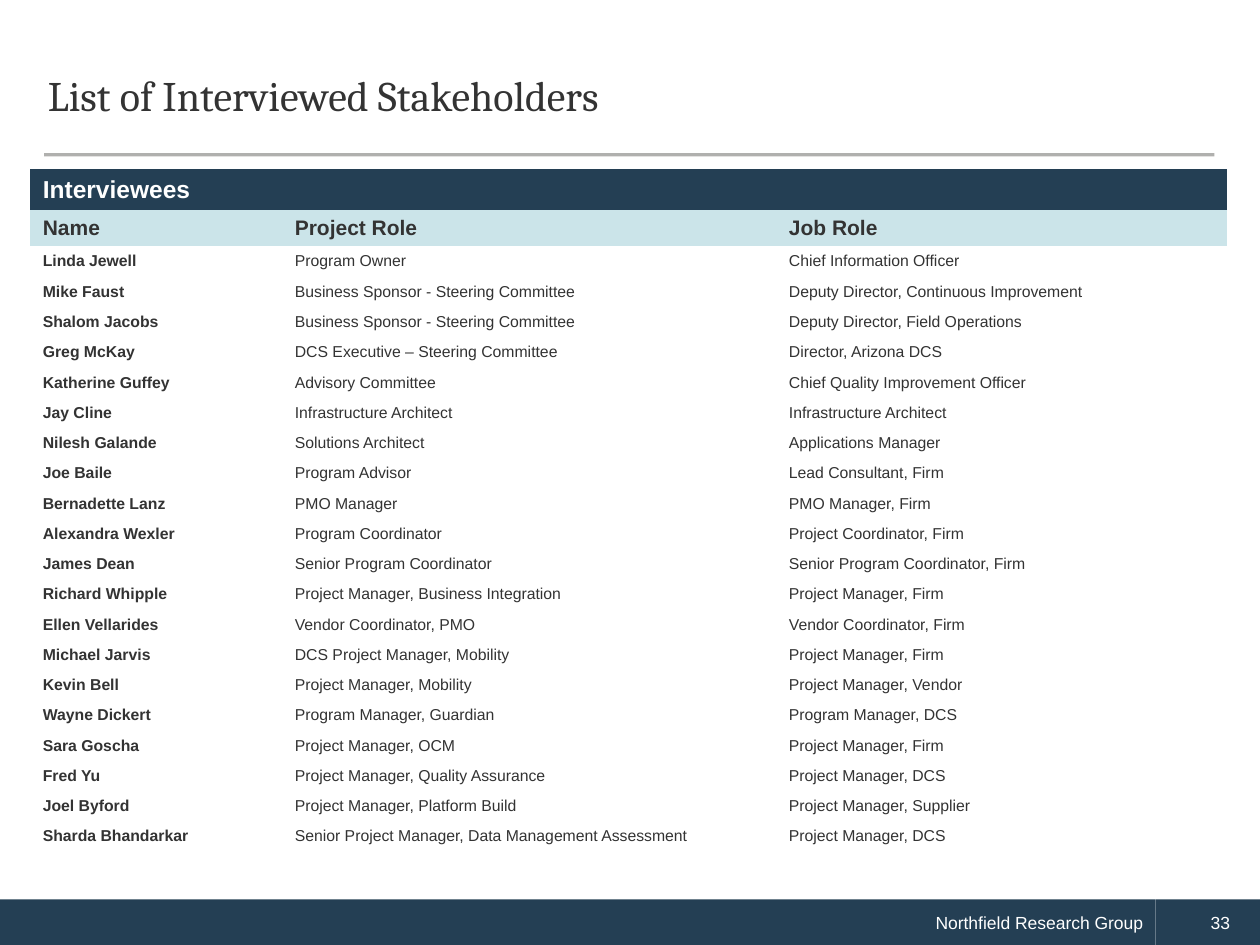
from dataclasses import dataclass

from lxml import etree
from pptx import Presentation
from pptx.dml.color import RGBColor
from pptx.enum import shapes, text
from pptx.oxml.ns import qn
from pptx.util import Cm, Pt


@dataclass(frozen=True)
class Theme:
    navy: RGBColor = RGBColor(0x24, 0x3F, 0x54)
    pale: RGBColor = RGBColor(0xCB, 0xE4, 0xE9)
    ink: RGBColor = RGBColor(0x33, 0x33, 0x33)
    rule: RGBColor = RGBColor(0x45, 0x43, 0x3E)
    white: RGBColor = RGBColor(0xFF, 0xFF, 0xFF)
    heading_face: str = "Cambria"
    body_face: str = "Arial"
    title_size: int = 24
    banner_size: int = 14
    header_size: int = 12
    row_size: int = 9
    footer_size: int = 10


THEME = Theme()
NO_GRID_STYLE = "{2D5ABB26-0587-4C30-8999-92F81FD0307C}"
COLUMN_WIDTHS = (5.08, 9.96, 9.09)
BANNER_HEIGHT, HEADER_HEIGHT, ROW_HEIGHT = 0.83, 0.73, 0.61

HEADERS = ("Name", "Project Role", "Job Role")
INTERVIEWEES = (
    ("Linda Jewell", "Program Owner", "Chief Information Officer"),
    ("Mike Faust", "Business Sponsor - Steering Committee", "Deputy Director, Continuous Improvement"),
    ("Shalom Jacobs", "Business Sponsor - Steering Committee", "Deputy Director, Field Operations"),
    ("Greg McKay", "DCS Executive – Steering Committee", "Director, Arizona DCS"),
    ("Katherine Guffey", "Advisory Committee", "Chief Quality Improvement Officer"),
    ("Jay Cline", "Infrastructure Architect", "Infrastructure Architect"),
    ("Nilesh Galande", "Solutions Architect", "Applications Manager"),
    ("Joe Baile", "Program Advisor", "Lead Consultant, Firm"),
    ("Bernadette Lanz", "PMO Manager", "PMO Manager, Firm"),
    ("Alexandra Wexler", "Program Coordinator", "Project Coordinator, Firm"),
    ("James Dean", "Senior Program Coordinator", "Senior Program Coordinator, Firm"),
    ("Richard Whipple", "Project Manager, Business Integration", "Project Manager, Firm"),
    ("Ellen Vellarides", "Vendor Coordinator, PMO", "Vendor Coordinator, Firm"),
    ("Michael Jarvis", "DCS Project Manager, Mobility", "Project Manager, Firm"),
    ("Kevin Bell", "Project Manager, Mobility", "Project Manager, Vendor"),
    ("Wayne Dickert", "Program Manager, Guardian", "Program Manager, DCS"),
    ("Sara Goscha", "Project Manager, OCM", "Project Manager, Firm"),
    ("Fred Yu", "Project Manager, Quality Assurance", "Project Manager, DCS"),
    ("Joel Byford", "Project Manager, Platform Build", "Project Manager, Supplier"),
    ("Sharda Bhandarkar", "Senior Project Manager, Data Management Assessment", "Project Manager, DCS"),
)


def style_font(font, face, size, color, bold=False):
    font.name, font.size, font.bold = face, Pt(size), bold
    font.color.rgb = color


def place_heading(slide, left, top, width, height):
    """Title with the translucent rule just above the lower edge of its box."""
    title = slide.shapes.title
    title.left, title.top, title.width, title.height = map(Cm, (left, top, width, height))
    frame = title.text_frame
    frame.text = "List of Interviewed Stakeholders"
    frame.vertical_anchor = text.MSO_ANCHOR.MIDDLE
    paragraph = frame.paragraphs[0]
    paragraph.alignment = text.PP_ALIGN.LEFT
    paragraph.line_spacing = Pt(26)
    style_font(paragraph.font, THEME.heading_face, THEME.title_size, THEME.ink)

    inset, rule_y = 0.18, Cm(top + height - 0.03)
    rule = slide.shapes.add_connector(
        shapes.MSO_CONNECTOR.STRAIGHT,
        Cm(left + inset), rule_y, Cm(left + width - inset), rule_y)
    rule.line.color.rgb = THEME.rule
    rule.line.width = Pt(1.75)
    properties = rule._element.spPr
    color = next(properties.iter(qn("a:srgbClr")))
    etree.SubElement(color, qn("a:alpha"), val="42000")
    etree.SubElement(properties, qn("a:effectLst"))


def fill_cell(cell, words, size, color, bold, fill=None):
    cell.text = words
    cell.vertical_anchor = text.MSO_ANCHOR.BOTTOM
    cell.margin_top = cell.margin_bottom = Cm(0.12)
    if fill is None:
        cell.fill.background()
    else:
        cell.fill.solid()
        cell.fill.fore_color.rgb = fill
    style_font(cell.text_frame.paragraphs[0].font, THEME.body_face, size, color, bold)


def place_interviewees(slide, left, top):
    heights = [BANNER_HEIGHT, HEADER_HEIGHT] + [ROW_HEIGHT] * len(INTERVIEWEES)
    table = slide.shapes.add_table(
        len(heights), len(HEADERS), Cm(left), Cm(top),
        Cm(sum(COLUMN_WIDTHS)), Cm(sum(heights))).table
    table._tbl.tblPr.find(qn("a:tableStyleId")).text = NO_GRID_STYLE
    table.first_row = table.horz_banding = False
    for column, width in zip(table.columns, COLUMN_WIDTHS):
        column.width = Cm(width)
    for row, height in zip(table.rows, heights):
        row.height = Cm(height)

    banner = table.cell(0, 0)
    banner.merge(table.cell(0, len(HEADERS) - 1))
    fill_cell(banner, "Interviewees", THEME.banner_size, THEME.white, True, THEME.navy)
    for column, header in enumerate(HEADERS):
        fill_cell(table.cell(1, column), header, THEME.header_size, THEME.ink, True, THEME.pale)
    for row, interviewee in enumerate(INTERVIEWEES, start=2):
        for column, words in enumerate(interviewee):
            fill_cell(table.cell(row, column), words, THEME.row_size, THEME.ink, column == 0)


def place_footer(slide, left, top, width, height):
    number_width = 2.11
    group_width = width - number_width
    parts = (
        ("Northfield Research Group", left, group_width, text.PP_ALIGN.RIGHT),
        ("33", left + group_width, number_width, text.PP_ALIGN.CENTER),
    )
    for words, part_left, part_width, alignment in parts:
        bar = slide.shapes.add_shape(
            shapes.MSO_SHAPE.RECTANGLE, Cm(part_left), Cm(top), Cm(part_width), Cm(height))
        bar.shadow.inherit = False
        bar.fill.solid()
        bar.fill.fore_color.rgb = THEME.navy
        bar.line.fill.background()
        frame = bar.text_frame
        frame.text = words
        frame.margin_left = Cm(0.76)
        frame.vertical_anchor = text.MSO_ANCHOR.MIDDLE
        paragraph = frame.paragraphs[0]
        paragraph.alignment = alignment
        style_font(paragraph.font, THEME.body_face, THEME.footer_size, THEME.white)


def main():
    deck = Presentation()
    deck.slide_width, deck.slide_height = Cm(25.4), Cm(19.05)
    title_only = deck.slide_layouts[5]
    slide = deck.slides.add_slide(title_only)
    place_footer(slide, 0, 18.13, 25.4, 0.92)
    place_heading(slide, 0.71, 0.76, 23.95, 2.39)
    place_interviewees(slide, 0.61, 3.4)
    deck.save("out.pptx")


if __name__ == "__main__":
    main()
